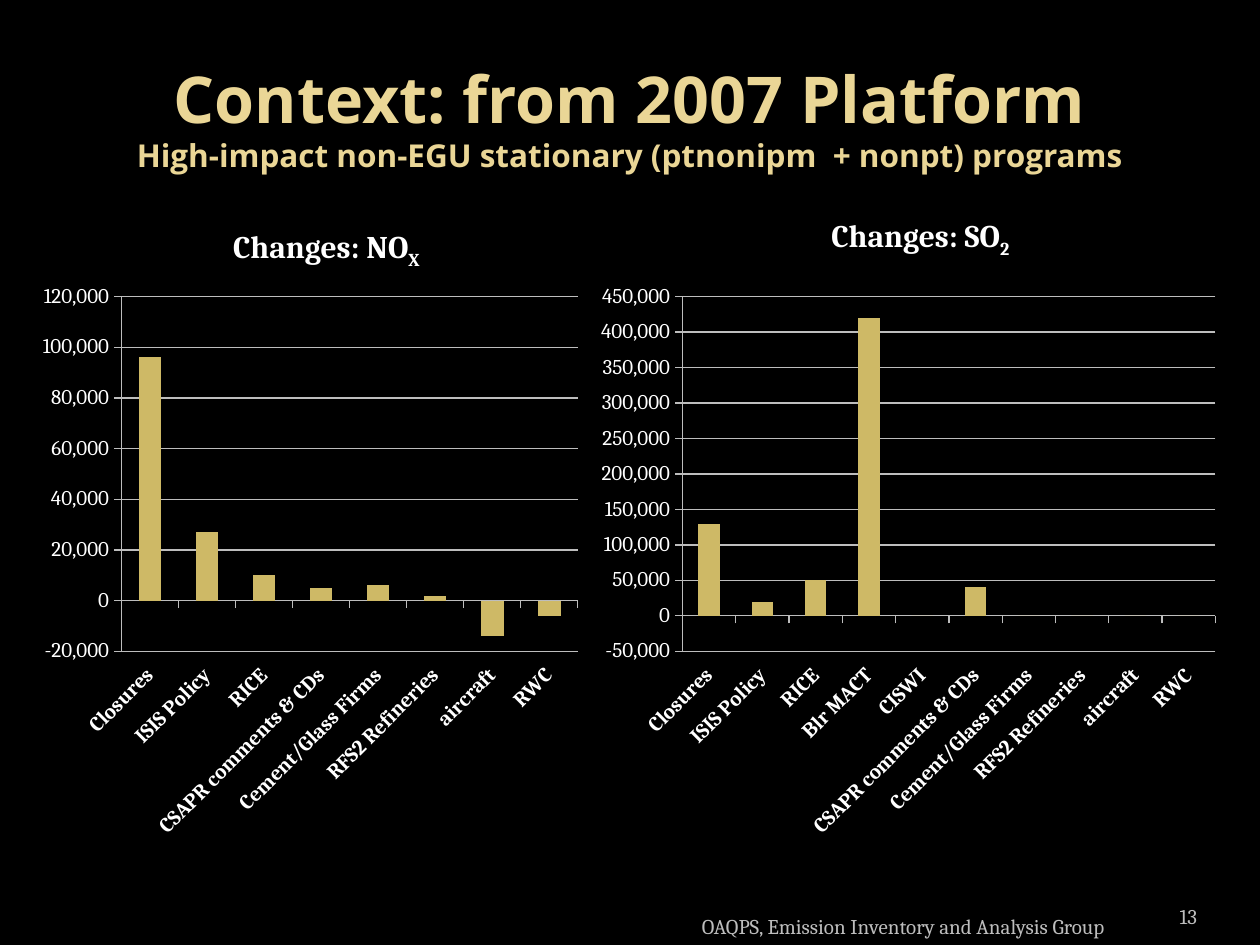
from pptx import Presentation
from pptx.chart.data import CategoryChartData
from pptx.dml.color import RGBColor
from pptx.enum.chart import XL_CHART_TYPE, XL_TICK_LABEL_POSITION, XL_TICK_MARK
from pptx.enum.text import MSO_ANCHOR, MSO_AUTO_SIZE, PP_ALIGN
from pptx.util import Cm, Pt

BACKGROUND, GOLD, BAR = "000000", "EAD696", "CEB966"
WHITE, GRAY = "FFFFFF", "BDBDBD"
BODY_FONT, TITLE_FONT = "Cambria", "Open Sans"

TITLE_LINES = [
    ("Context: from 2007 Platform", 36.9),
    ("High-impact non-EGU stationary (ptnonipm  + nonpt) programs", 18),
]
CHART_TOP, CHART_HEIGHT = 5.51, 11.63
# Positions and sizes are in centimetres
CHARTS = [
    {
        "left": 0.64, "width": 11.23,
        "heading": ("Changes: NO", "X"), "heading_box": (4.45, 4.45, 4.72, 1.02),
        "scale": (-20000, 120000, 20000),
        "values": [
            ("Closures", 96000), ("ISIS Policy", 27000), ("RICE", 10000),
            ("CSAPR comments & CDs", 5000), ("Cement/Glass Firms", 6000),
            ("RFS2 Refineries", 2000), ("aircraft", -14000), ("RWC", -6000),
        ],
    },
    {
        "left": 11.86, "width": 12.9,
        "heading": ("Changes: SO", "2"), "heading_box": (16.51, 4.24, 4.5, 1.02),
        "scale": (-50000, 450000, 50000),
        "values": [
            ("Closures", 130000), ("ISIS Policy", 20000), ("RICE", 50000),
            ("Blr MACT", 420000), ("CISWI", 0), ("CSAPR comments & CDs", 40000),
            ("Cement/Glass Firms", 0), ("RFS2 Refineries", 0),
            ("aircraft", 0), ("RWC", 0),
        ],
    },
]
FOOTERS = [
    ("OAQPS, Emission Inventory and Analysis Group",
     (13.13, 18.03, 10.16, 1.02), PP_ALIGN.CENTER, 0.25),
    ("13", (22.02, 17.83, 2.11, 1.02), PP_ALIGN.RIGHT, 0),
]


def color(value):
    return RGBColor.from_string(value)


def style(font, size, shade, name=BODY_FONT, bold=False):
    font.size, font.name, font.bold = Pt(size), name, bold
    font.color.rgb = color(shade)


def add_span(para, text, *look, **options):
    span = para.add_run()
    span.text = text
    style(span.font, *look, **options)
    return span


def add_box(slide, place):
    return slide.shapes.add_textbox(*map(Cm, place)).text_frame


def fill_title(slide):
    title = slide.shapes.title
    title.left, title.top, title.width, title.height = map(Cm, (1.27, 0.76, 22.86, 3.18))
    frame = title.text_frame
    frame.auto_size = MSO_AUTO_SIZE.NONE
    frame.vertical_anchor = MSO_ANCHOR.MIDDLE
    para = frame.paragraphs[0]
    para.alignment = PP_ALIGN.CENTER
    for index, (text, size) in enumerate(TITLE_LINES):
        if index:
            para.add_line_break()
        add_span(para, text, size, GOLD, name=TITLE_FONT, bold=True)


def add_heading(slide, heading, place):
    frame = add_box(slide, place)
    frame.word_wrap = False
    frame.auto_size = MSO_AUTO_SIZE.SHAPE_TO_FIT_TEXT
    para = frame.paragraphs[0]
    base, subscript = [add_span(para, text, 18, WHITE, bold=True) for text in heading]
    subscript.font._element.set("baseline", "-25000")


def add_column_chart(slide, left, width, scale, values):
    data = CategoryChartData(number_format="#,##0")
    data.categories = [name for name, _ in values]
    data.add_series("Series 1", [value for _, value in values])
    chart = slide.shapes.add_chart(
        XL_CHART_TYPE.COLUMN_CLUSTERED, Cm(left), Cm(CHART_TOP),
        Cm(width), Cm(CHART_HEIGHT), data).chart
    chart.has_title = chart.has_legend = False
    style(chart.font, 10, WHITE)

    plot = chart.plots[0]
    plot.gap_width = 150
    plot.vary_by_categories = False
    series = plot.series[0]
    series.invert_if_negative = False
    series.format.fill.solid()
    series.format.fill.fore_color.rgb = color(BAR)

    names, amounts = chart.category_axis, chart.value_axis
    for axis in (names, amounts):
        style(axis.tick_labels.font, 12, WHITE, bold=axis is names)
        axis.major_tick_mark = XL_TICK_MARK.OUTSIDE
        axis.format.line.color.rgb = color(GRAY)
        axis.format.line.width = Pt(0.75)
    names.tick_label_position = XL_TICK_LABEL_POSITION.LOW
    names._element.txPr.bodyPr.set("rot", "-2700000")  # 45 degrees upwards

    amounts.minimum_scale, amounts.maximum_scale, amounts.major_unit = scale
    amounts.tick_labels.number_format = "#,##0"
    amounts.tick_labels.number_format_is_linked = False
    amounts.has_major_gridlines = True
    grid = amounts.major_gridlines.format.line
    grid.color.rgb = color(GRAY)
    grid.width = Pt(0.75)


def add_footer(slide, text, place, alignment, side_margin):
    frame = add_box(slide, place)
    frame.word_wrap = True
    frame.vertical_anchor = MSO_ANCHOR.BOTTOM
    frame.margin_left = frame.margin_right = Cm(side_margin)
    para = frame.paragraphs[0]
    para.alignment = alignment
    add_span(para, text, 12, GRAY)


def main():
    deck = Presentation()
    deck.slide_width, deck.slide_height = Cm(25.4), Cm(19.05)
    slide = deck.slides.add_slide(deck.slide_layouts[5])
    slide.background.fill.solid()
    slide.background.fill.fore_color.rgb = color(BACKGROUND)

    fill_title(slide)
    for item in CHARTS:
        add_column_chart(slide, item["left"], item["width"], item["scale"], item["values"])
        add_heading(slide, item["heading"], item["heading_box"])
    for footer in FOOTERS:
        add_footer(slide, *footer)
    deck.save("out.pptx")


if __name__ == "__main__":
    main()
